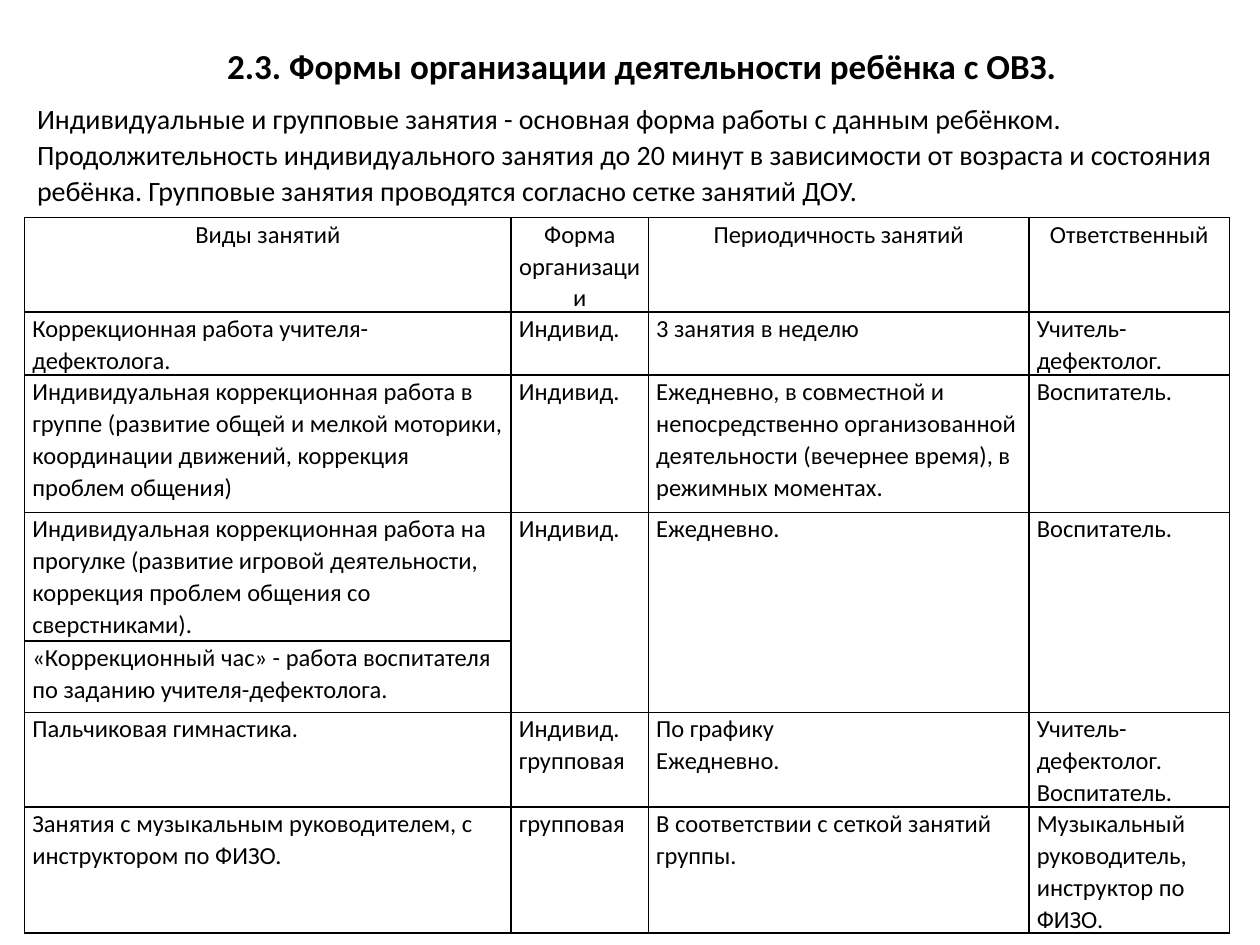
from dataclasses import dataclass

from lxml.etree import SubElement
from pptx import Presentation
from pptx.dml.color import RGBColor
from pptx.enum.text import MSO_AUTO_SIZE, PP_ALIGN
from pptx.oxml.ns import qn
from pptx.util import Pt

BLACK = RGBColor(0, 0, 0)
FONT = "Calibri"
LINE_SPACING = 1.07
CELL_INSET = Pt(4.4)
COLUMN_WIDTHS = (278, 78.5, 217.5, 114.5)
TABLE_HEIGHT = 409
MERGED_ROWS = (3, 4)
MERGED_COLUMNS = (1, 2, 3)


@dataclass(frozen=True)
class TableRow:
    height: float
    activity: str
    form: str = ""
    frequency: str = ""
    responsible: str = ""


ROWS = (
    TableRow(27.4, "Виды занятий", "Форма организации", "Периодичность занятий", "Ответственный"),
    TableRow(27.4, "Коррекционная работа учителя-дефектолога.", "Индивид.",
             "3 занятия в неделю", "Учитель-дефектолог."),
    TableRow(78.5, "Индивидуальная коррекционная работа в группе (развитие общей и мелкой "
             "моторики, координации движений, коррекция проблем общения)", "Индивид.",
             "Ежедневно, в совместной и непосредственно организованной деятельности "
             "(вечернее время), в режимных моментах.", "Воспитатель."),
    TableRow(73.4, "Индивидуальная коррекционная работа на прогулке (развитие игровой "
             "деятельности, коррекция проблем общения со сверстниками).", "Индивид.",
             "Ежедневно.", "Воспитатель."),
    TableRow(41, "«Коррекционный час» - работа воспитателя по заданию учителя-дефектолога."),
    TableRow(41, "Пальчиковая гимнастика.", "Индивид.\nгрупповая",
             "По графику\nЕжедневно.", "Учитель-дефектолог.\nВоспитатель."),
    TableRow(55.4, "Занятия с музыкальным руководителем, с инструктором по ФИЗО.",
             "групповая", "В соответствии с сеткой занятий группы.",
             "Музыкальный руководитель, инструктор по ФИЗО."),
)


def write_text(text_frame, text: str, *, size: float, bold: bool = False,
               alignment=PP_ALIGN.LEFT, line_spacing: float = LINE_SPACING) -> None:
    """Write one paragraph for each line of the text."""
    for index, line in enumerate(text.split("\n")):
        paragraph = text_frame.paragraphs[0] if index == 0 else text_frame.add_paragraph()
        paragraph.alignment = alignment
        paragraph.line_spacing = line_spacing
        run = paragraph.add_run()
        run.text = line
        run.font.name = FONT
        run.font.size = Pt(size)
        run.font.bold = bold
        run.font.color.rgb = BLACK


def add_text_box(slide, left: float, top: float, width: float, height: float,
                 text: str, *, wrap: bool = True, **text_format) -> None:
    shape = slide.shapes.add_textbox(Pt(left), Pt(top), Pt(width), Pt(height))
    shape.text_frame.word_wrap = wrap
    shape.text_frame.auto_size = MSO_AUTO_SIZE.SHAPE_TO_FIT_TEXT
    write_text(shape.text_frame, text, **text_format)


def style_cell(cell) -> None:
    """Clear the fill, set the insets and draw a thin black border on all sides."""
    cell.fill.background()
    cell.margin_left = cell.margin_right = CELL_INSET
    cell.margin_top = cell.margin_bottom = 0
    properties = cell._tc.get_or_add_tcPr()
    for index, side in enumerate(("lnL", "lnR", "lnT", "lnB")):
        line = SubElement(properties, qn(f"a:{side}"), w=str(Pt(1)))
        fill = SubElement(line, qn("a:solidFill"))
        SubElement(fill, qn("a:srgbClr"), val=str(BLACK))
        properties.insert(index, line)


def add_activity_table(slide, left: float, top: float) -> None:
    frame = slide.shapes.add_table(len(ROWS), len(COLUMN_WIDTHS), Pt(left), Pt(top),
                                   Pt(sum(COLUMN_WIDTHS)), Pt(TABLE_HEIGHT))
    table = frame.table
    table.first_row = False
    table.horz_banding = False
    for column, width in zip(table.columns, COLUMN_WIDTHS):
        column.width = Pt(width)
    for row_index, row in enumerate(ROWS):
        table.rows[row_index].height = Pt(row.height)
        alignment = PP_ALIGN.CENTER if row_index == 0 else PP_ALIGN.LEFT
        texts = (row.activity, row.form, row.frequency, row.responsible)
        for column_index, text in enumerate(texts):
            cell = table.cell(row_index, column_index)
            style_cell(cell)
            if text:
                write_text(cell.text_frame, text, size=14, alignment=alignment)
    first_row, last_row = MERGED_ROWS
    for column_index in MERGED_COLUMNS:
        table.cell(first_row, column_index).merge(table.cell(last_row, column_index))
    frame.height = Pt(TABLE_HEIGHT)


def main() -> None:
    presentation = Presentation()
    presentation.slide_width = Pt(720)
    presentation.slide_height = Pt(540)
    slide = presentation.slides.add_slide(presentation.slide_layouts[6])
    add_text_box(slide, 121.7, 21.6, 490.3, 31.5,
                 "2.3. Формы организации деятельности ребёнка с ОВЗ.",
                 wrap=False, size=20, bold=True, alignment=PP_ALIGN.CENTER, line_spacing=1.0)
    add_text_box(slide, 14.1, 53.3, 688, 68.4,
                 "Индивидуальные и групповые занятия - основная форма работы с данным ребёнком. "
                 "Продолжительность индивидуального занятия до 20 минут в зависимости от возраста "
                 "и состояния ребёнка. Групповые занятия проводятся согласно сетке занятий ДОУ.",
                 size=16)
    add_activity_table(slide, 14.1, 124.4)
    presentation.save("out.pptx")


if __name__ == "__main__":
    main()
